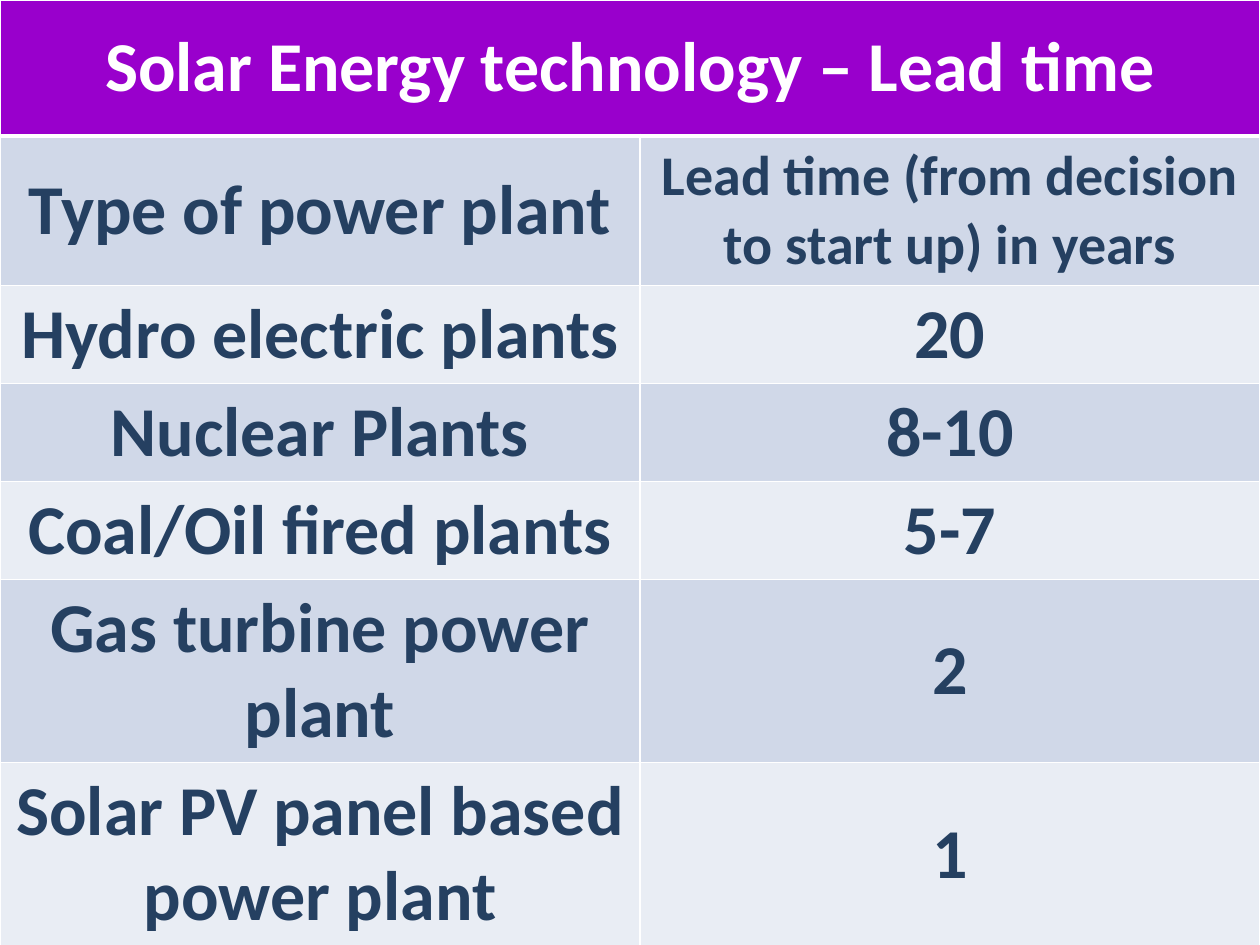
from lxml.etree import SubElement
from pptx import Presentation
from pptx.dml.color import RGBColor
from pptx.enum.text import MSO_ANCHOR as Anchor, PP_ALIGN as Align
from pptx.oxml.ns import qn
from pptx.util import Emu, Pt

SCALE = 914400 / 126
WIDTH, HEIGHT = 1260, 945
COLUMNS = [640, 620]
ROWS = [136, 149, 98, 98, 98, 183, 183]
PURPLE, NAVY, WHITE = "9900CC", "254061", "FFFFFF"
BANDS = ["E9EDF4", "D0D8E8"]
TITLE = "Solar Energy technology – Lead time"
LEAD_TIMES = [
    ("Type of power plant", "Lead time (from decision to start up) in years"),
    ("Hydro electric plants", "20"),
    ("Nuclear Plants", "8-10"),
    ("Coal/Oil fired plants", "5-7"),
    ("Gas turbine power plant", "2"),
    ("Solar PV panel based power plant", "1"),
]


def px(n):
    """Turn pixels into EMU."""
    return Emu(round(n * SCALE))


def color(hex_string):
    """Turn a hex string into a colour."""
    return RGBColor.from_string(hex_string)


def set_borders(cell, widths):
    """Draw white borders with the given point width for each side."""
    tc_pr = cell._tc.get_or_add_tcPr()
    for side, width in widths.items():
        ln = SubElement(tc_pr, qn(f"a:ln{side}"), w=str(Pt(width)))
        fill = SubElement(ln, qn("a:solidFill"))
        SubElement(fill, qn("a:srgbClr"), val=WHITE)


def style_cell(cell, text, fill, ink, size=40, top=1, bottom=1):
    """Fill a cell and write its bold centred text."""
    set_borders(cell, {"L": 1, "R": 1, "T": top, "B": bottom})
    cell.fill.solid()
    cell.fill.fore_color.rgb = color(fill)
    cell.vertical_anchor = Anchor.MIDDLE
    cell.text = text
    p = cell.text_frame.paragraphs[0]
    p.alignment = Align.CENTER
    for r in p.runs:
        r.font.name = "Calibri"
        r.font.size = Pt(size)
        r.font.bold = True
        r.font.color.rgb = color(ink)


def add_lead_time_table(slide, left, top, width, height):
    """Add the lead time table with its merged title row."""
    frame = slide.shapes.add_table(
        len(ROWS), len(COLUMNS), px(left), px(top), px(width), px(height))
    table = frame.table
    for column, size in zip(table.columns, COLUMNS):
        column.width = px(size)
    for row, size in zip(table.rows, ROWS):
        row.height = px(size)
    table.cell(0, 0).merge(table.cell(0, 1))
    for i, title in enumerate([TITLE, ""]):
        style_cell(table.cell(0, i), title, PURPLE, WHITE, bottom=3)
    for i, values in enumerate(LEAD_TIMES, start=1):
        for j, value in enumerate(values):
            style_cell(table.cell(i, j), value, BANDS[i % 2], NAVY,
                       size=32 if (i, j) == (1, 1) else 40,
                       top=3 if i == 1 else 1)


def main():
    """Build and save the slide."""
    prs = Presentation()
    prs.slide_width, prs.slide_height = px(WIDTH), px(HEIGHT)
    slide = prs.slides.add_slide(prs.slide_layouts[6])
    add_lead_time_table(slide, 0, 0, WIDTH, HEIGHT)
    prs.save("out.pptx")


if __name__ == "__main__":
    main()
